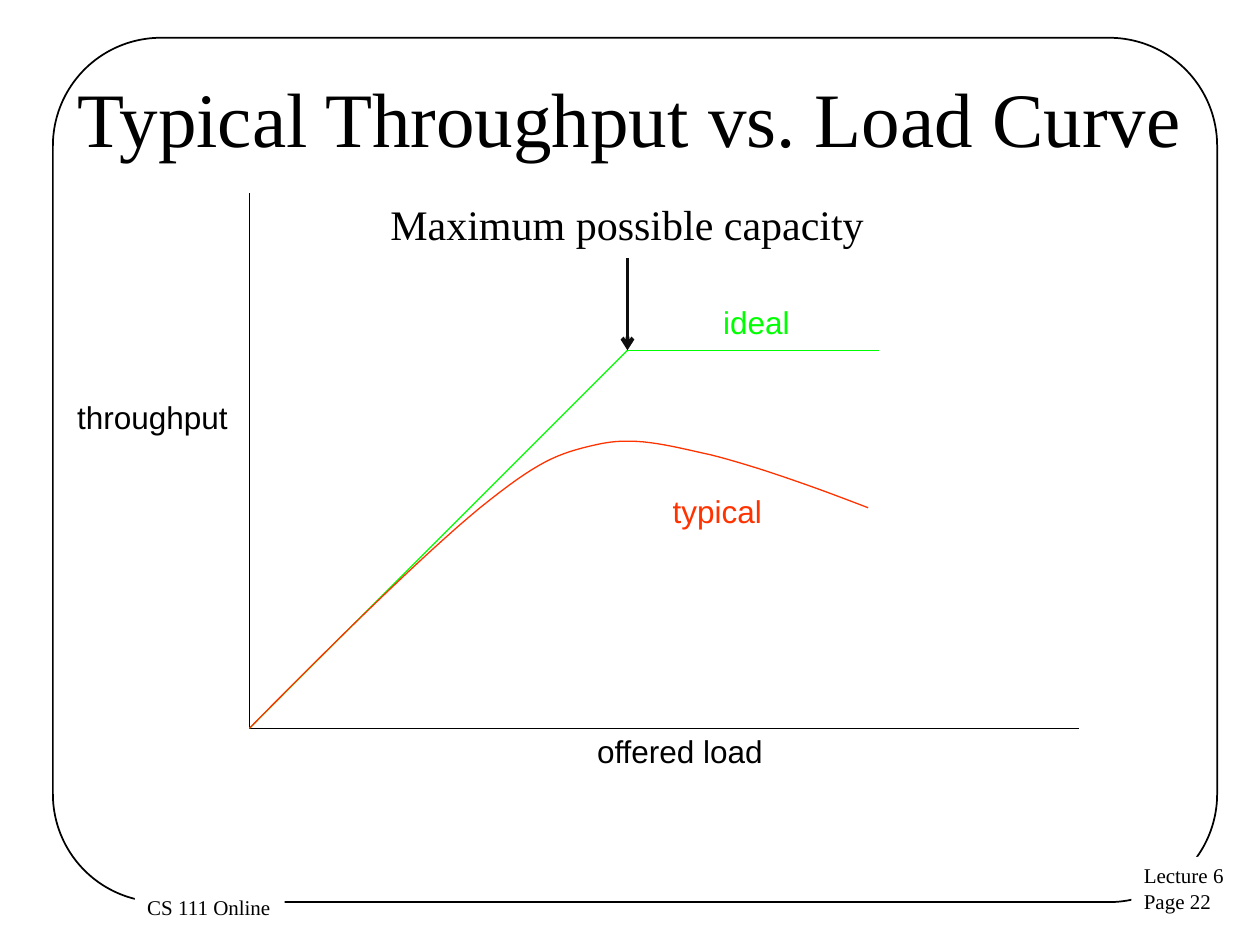
"""Builds a slide comparing ideal and typical throughput as load grows."""
from lxml.etree import SubElement
from pptx import Presentation
from pptx.dml.color import RGBColor
from pptx.enum.shapes import MSO_CONNECTOR, MSO_SHAPE
from pptx.enum.text import MSO_ANCHOR, PP_ALIGN
from pptx.oxml.ns import qn
from pptx.util import Inches, Pt

SERIF, SANS = "Times New Roman", "Arial"
BLACK, WHITE, GREEN, RED, ARROW = "000000", "FFFFFF", "00FF00", "FF3300", "0D0D0D"
ORIGIN, KNEE = (1.98, 5.78), (4.98, 2.78)

FRAME = (0.42, 0.3, 9.24, 6.86)
FOOTERS = [
    ("Lecture 6\nPage 22", (8.98, 6.8, 0.84, 0.51)),
    ("CS 111 Online", (1.07, 7.05, 1.19, 0.3)),
]
TITLE = ("Typical Throughput vs. Load Curve", (0.5, 0.3, 9, 1.25))
LABELS = [
    ("throughput", (0.41, 3.11, 1.6, 0.43), SANS, 18, BLACK, PP_ALIGN.CENTER),
    ("offered load", (4.64, 5.76, 1.67, 0.43), SANS, 18, BLACK, PP_ALIGN.LEFT),
    ("ideal", (5.64, 2.36, 0.79, 0.43), SANS, 18, GREEN, PP_ALIGN.LEFT),
    ("typical", (5.24, 3.86, 0.99, 0.43), SANS, 18, RED, PP_ALIGN.LEFT),
    ("Maximum possible capacity", (3, 1.53, 4, 0.5), SERIF, 24, BLACK, PP_ALIGN.LEFT),
]
LINES = [
    (ORIGIN, (1.98, 1.53), BLACK),
    (ORIGIN, (8.56, 5.78), BLACK),
    (ORIGIN, KNEE, GREEN),
    (KNEE, (6.98, 2.78), GREEN),
]
TYPICAL_CURVE = [
    ((2.66, 5.09), (3.35, 4.41), (3.81, 4.03)),
    ((4.27, 3.66), (4.42, 3.6), (4.73, 3.53)),
    ((5.03, 3.46), (5.28, 3.53), (5.64, 3.61)),
    ((6, 3.7), (6.45, 3.86), (6.89, 4.03)),
]
STEPS = 16


def rgb(color):
    return RGBColor.from_string(color)


def box(values):
    return [Inches(v) for v in values]


def set_line(sp, color, width):
    sp.line.color.rgb = rgb(color)
    sp.line.width = Pt(width)


def write(sp, text, font, size, color, align=PP_ALIGN.LEFT, anchor=MSO_ANCHOR.TOP):
    tf = sp.text_frame
    tf.text = text
    tf.word_wrap = False
    tf.vertical_anchor = anchor
    for p in tf.paragraphs:
        p.alignment = align
        for r in p.runs:
            r.font.name = font
            r.font.size = Pt(size)
            r.font.color.rgb = rgb(color)


def add_line(s, start, end, color, width=0.75, arrow=False):
    sp = s.shapes.add_connector(MSO_CONNECTOR.STRAIGHT, *box(start + end))
    set_line(sp, color, width)
    if arrow:
        SubElement(sp.line._get_or_add_ln(), qn("a:tailEnd"), type="arrow")
    SubElement(sp._element.spPr, qn("a:effectLst"))


def bezier(points, t):
    weights = ((1 - t) ** 3, 3 * t * (1 - t) ** 2, 3 * t * t * (1 - t), t ** 3)
    return [sum(w * v for w, v in zip(weights, axis)) for axis in zip(*points)]


def add_curve(s, start, segments, color):
    builder = s.shapes.build_freeform(*box(start))
    for segment in segments:
        points = (start, *segment)
        builder.add_line_segments(
            [box(bezier(points, i / STEPS)) for i in range(1, STEPS + 1)], close=False
        )
        start = segment[-1]
    sp = builder.convert_to_shape()
    sp.shadow.inherit = False
    sp.fill.background()
    set_line(sp, color, 0.75)


def main():
    prs = Presentation()
    prs.slide_width, prs.slide_height = Inches(10), Inches(7.5)
    s = prs.slides.add_slide(prs.slide_layouts[6])

    frame = s.shapes.add_shape(MSO_SHAPE.ROUNDED_RECTANGLE, *box(FRAME))
    frame.adjustments[0] = 0.125
    frame.shadow.inherit = False
    frame.fill.background()
    set_line(frame, BLACK, 1)

    for text, place in FOOTERS:
        sp = s.shapes.add_shape(MSO_SHAPE.RECTANGLE, *box(place))
        sp.shadow.inherit = False
        sp.fill.solid()
        sp.fill.fore_color.rgb = rgb(WHITE)
        sp.line.fill.background()
        write(sp, text, SERIF, 12, BLACK)

    text, place = TITLE
    sp = s.shapes.add_textbox(*box(place))
    write(sp, text, SERIF, 44, BLACK, PP_ALIGN.CENTER, MSO_ANCHOR.MIDDLE)

    for start, end, color in LINES:
        add_line(s, start, end, color)
    add_curve(s, ORIGIN, TYPICAL_CURVE, RED)
    add_line(s, (4.98, 2.05), KNEE, ARROW, 2.25, arrow=True)

    for text, place, font, size, color, align in LABELS:
        write(s.shapes.add_textbox(*box(place)), text, font, size, color, align)

    prs.save("out.pptx")


if __name__ == "__main__":
    main()
